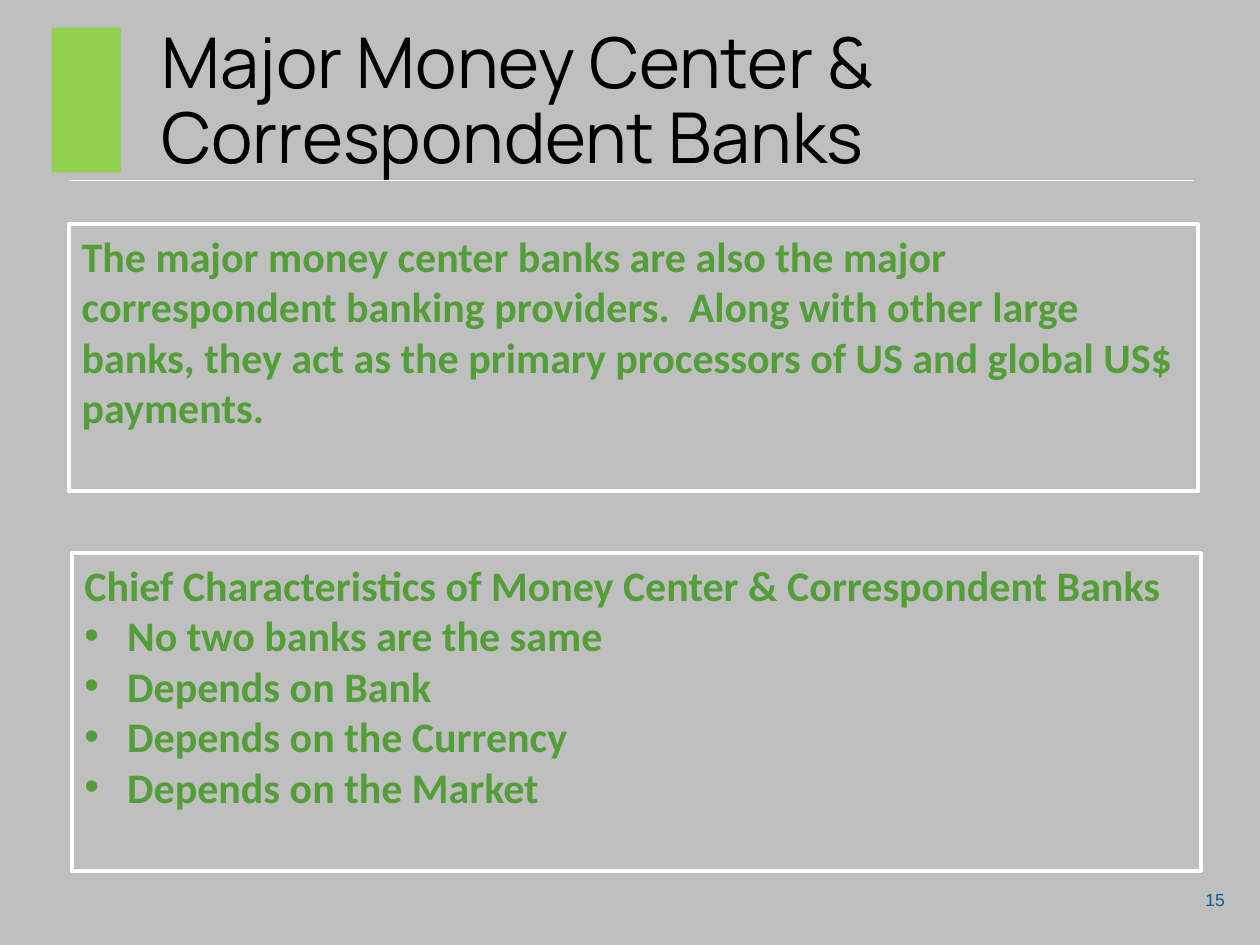
from lxml import etree
from pptx import Presentation
from pptx import util as u
from pptx.dml import color
from pptx.enum import shapes, text
from pptx.oxml import ns

Pt = u.Pt
hues = {"back": "BFBFBF", "line": "FFFFFF", "green": "549E39",
        "mark": "92D050", "title": "000000", "page": "006299"}


def rgb(key):
    return color.RGBColor.from_string(hues[key])


def write(frame, lines, size=24, face="Calibri", hue="green", bold=False,
          side=text.PP_ALIGN.LEFT, anchor=text.MSO_ANCHOR.TOP,
          gap=1.0, wrap=True, dots=False):
    frame.auto_size = text.MSO_AUTO_SIZE.NONE
    frame.word_wrap = wrap
    frame.vertical_anchor = anchor
    for i, line in enumerate(lines):
        para = frame.paragraphs[0] if i == 0 else frame.add_paragraph()
        para.text = line
        para.alignment = side
        para.line_spacing = gap
        para.space_before = para.space_after = Pt(0)
        props = para._p.get_or_add_pPr()
        dent = Pt(24.5) if dots and i else 0
        props.set("marL", str(dent))
        props.set("indent", str(-dent))
        if dent:
            font = etree.SubElement(props, ns.qn("a:buFont"))
            font.set("typeface", "Arial")
            etree.SubElement(props, ns.qn("a:buChar")).set("char", "•")
        else:
            etree.SubElement(props, ns.qn("a:buNone"))
        font = para.runs[0].font
        font.size, font.name, font.bold = Pt(size), face, bold
        font.color.rgb = rgb(hue)


deck = Presentation()
deck.slide_width, deck.slide_height = Pt(720), Pt(540)
slide = deck.slides.add_slide(deck.slide_layouts[1])
slide.background.fill.solid()
slide.background.fill.fore_color.rgb = rgb("back")
items = slide.shapes

rule = items.add_connector(shapes.MSO_CONNECTOR.STRAIGHT,
                           Pt(39.6), Pt(103), Pt(681.8), Pt(103))
rule.line.color.rgb = rgb("line")
rule.line.width = Pt(0.5)
etree.SubElement(rule._element.spPr, ns.qn("a:effectLst"))

mark = items.add_shape(shapes.MSO_SHAPE.RECTANGLE,
                       Pt(29.5), Pt(15.8), Pt(39.6), Pt(82.8))
mark.shadow.inherit = False
mark.fill.solid()
mark.fill.fore_color.rgb = rgb("mark")
mark.line.fill.background()

title = items.title
title.left, title.top, title.width, title.height = (
    Pt(85), Pt(18.7), Pt(583.9), Pt(80.6))
write(title.text_frame, ["Major Money Center & Correspondent Banks"],
      size=40, face="Manrope", hue="title", gap=0.9,
      anchor=text.MSO_ANCHOR.MIDDLE)

intro = items.add_shape(shapes.MSO_SHAPE.RECTANGLE, 0, 0, 0, 0)
intro.shadow.inherit = False
traits = slide.placeholders[1]
boxes = [
    (intro, 39.6, 128.2, 152.6, [
        "The major money center banks are also the major correspondent "
        "banking providers.  Along with other large banks, they act as the "
        "primary processors of US and global US$ payments."]),
    (traits, 41, 316.1, 181.4, [
        "Chief Characteristics of Money Center & Correspondent Banks",
        "No two banks are the same",
        "Depends on Bank",
        "Depends on the Currency",
        "Depends on the Market"]),
]
for box, left, top, high, lines in boxes:
    box.left, box.top, box.width, box.height = (
        Pt(left), Pt(top), Pt(645.1), Pt(high))
    box.fill.background()
    box.line.color.rgb = rgb("line")
    box.line.width = Pt(2.25)
    write(box.text_frame, lines, bold=True, dots=True)

page = items.add_textbox(Pt(680.4), Pt(504.7), Pt(26.6), Pt(19.4))
write(page.text_frame, ["15"], size=10, face="Arial", hue="page",
      side=text.PP_ALIGN.RIGHT, wrap=False)

deck.save("out.pptx")
